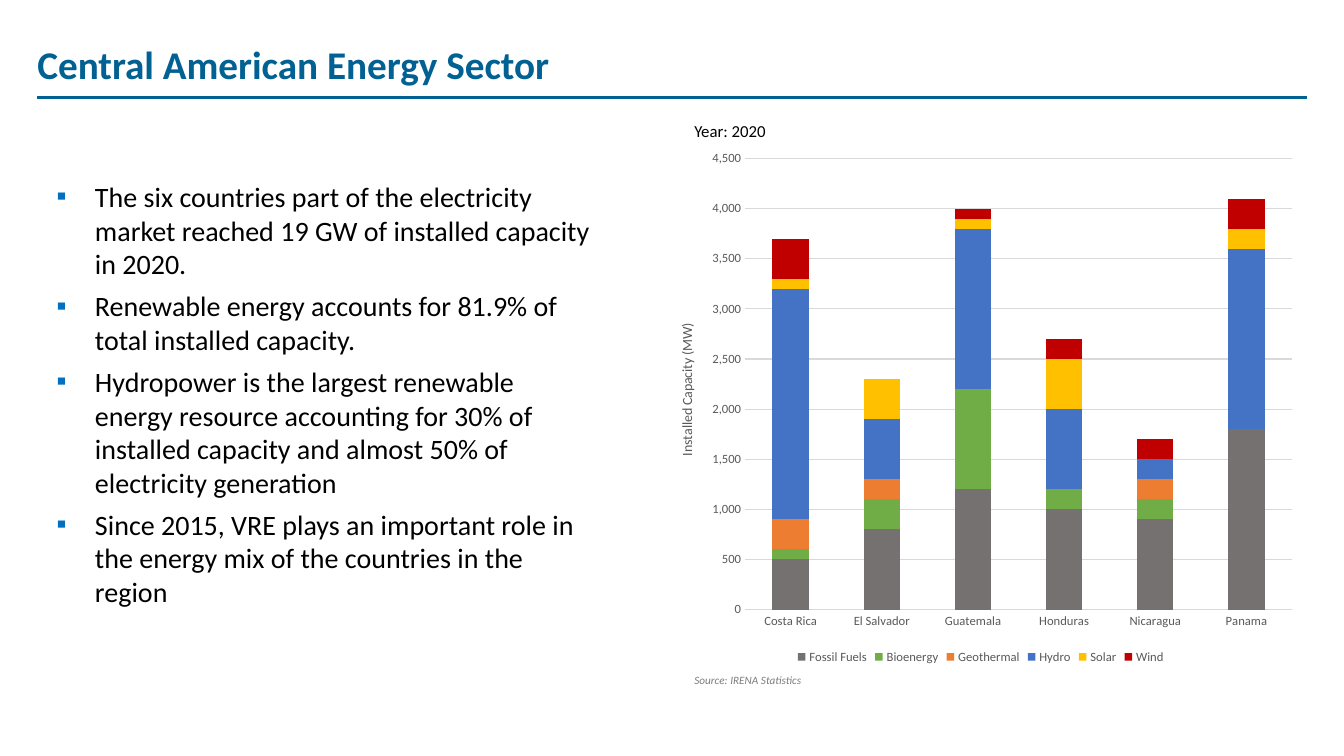
from dataclasses import dataclass

from lxml import etree
from pptx import Presentation
from pptx.chart.data import CategoryChartData
from pptx.dml.color import RGBColor
from pptx.enum.chart import XL_CHART_TYPE, XL_LEGEND_POSITION, XL_TICK_MARK
from pptx.enum.shapes import MSO_CONNECTOR
from pptx.enum.text import MSO_ANCHOR
from pptx.oxml.ns import qn
from pptx.util import Inches, Pt

STACKED = XL_CHART_TYPE.COLUMN_STACKED
LEGEND_BOTTOM = XL_LEGEND_POSITION.BOTTOM
NO_TICK = XL_TICK_MARK.NONE
STRAIGHT = MSO_CONNECTOR.STRAIGHT
TOP, MIDDLE = MSO_ANCHOR.TOP, MSO_ANCHOR.MIDDLE

SLIDE_W, SLIDE_H = Inches(13.33), Inches(7.5)


@dataclass(frozen=True)
class Theme:
    font: str = "Calibri"
    accent: str = "006192"
    text: str = "000000"
    bullet: str = "0070C0"
    source: str = "7C7C7C"
    axis: str = "595959"
    grid: str = "D9D9D9"
    title_size: float = 28
    body_size: float = 20
    year_size: float = 12
    axis_title_size: float = 10
    label_size: float = 9
    source_size: float = 8
    rule_width: float = 2.25
    grid_width: float = 0.75


THEME = Theme()

BULLETS = [
    "The six countries part of the electricity market reached 19 GW of installed capacity in 2020.",
    "Renewable energy accounts for 81.9% of total installed capacity.",
    "Hydropower is the largest renewable energy resource accounting for 30% of "
    "installed capacity and almost 50% of electricity generation",
    "Since 2015, VRE plays an important role in the energy mix of the countries in the region",
]

COUNTRIES = ["Costa Rica", "El Salvador", "Guatemala", "Honduras", "Nicaragua", "Panama"]
CAPACITY = [
    ("Fossil Fuels", "767171", [500, 800, 1200, 1000, 900, 1800]),
    ("Bioenergy", "70AD47", [100, 300, 1000, 200, 200, 0]),
    ("Geothermal", "ED7D31", [300, 200, 0, 0, 200, 0]),
    ("Hydro", "4472C4", [2300, 600, 1600, 800, 200, 1800]),
    ("Solar", "FFC000", [100, 400, 100, 500, 0, 200]),
    ("Wind", "C00000", [400, 0, 100, 200, 200, 300]),
]


def across(percent):
    return int(SLIDE_W * percent / 100)


def down(percent):
    return int(SLIDE_H * percent / 100)


def place(x, y, w, h):
    return across(x), down(y), across(w), down(h)


def style_font(font, size, color, bold=False, italic=False):
    font.name = THEME.font
    font.size = Pt(size)
    font.color.rgb = RGBColor.from_string(color)
    font.bold = bold
    font.italic = italic


def style_line(line, color, width):
    line.color.rgb = RGBColor.from_string(color)
    line.width = Pt(width)


def add_text(s, area, lines, size, color, anchor=TOP, bold=False, italic=False):
    tf = s.shapes.add_textbox(*place(*area)).text_frame
    tf.word_wrap = True
    tf.vertical_anchor = anchor
    tf.text = "\n".join(lines)
    for p in tf.paragraphs:
        for r in p.runs:
            style_font(r.font, size, color, bold, italic)
    return tf


def add_bullet(p):
    p.space_after = Pt(6)
    pPr = p._p.get_or_add_pPr()
    pPr.set("marL", str(Inches(0.88)))
    pPr.set("indent", str(Inches(-0.38)))
    color = etree.SubElement(pPr, qn("a:buClr"))
    etree.SubElement(color, qn("a:srgbClr"), val=THEME.bullet)
    etree.SubElement(pPr, qn("a:buFont"), typeface=THEME.font)
    etree.SubElement(pPr, qn("a:buChar"), char="▪")


def add_rule(s, left, right, y):
    rule = s.shapes.add_connector(STRAIGHT, across(left), down(y), across(right), down(y))
    style_line(rule.line, THEME.accent, THEME.rule_width)
    etree.SubElement(rule._element.spPr, qn("a:effectLst"))


def set_layout(parent, index, **percents):
    for old in parent.findall(qn("c:layout")):
        parent.remove(old)
    layout = etree.Element(qn("c:layout"))
    manual = etree.SubElement(layout, qn("c:manualLayout"))
    if "w" in percents:
        etree.SubElement(manual, qn("c:layoutTarget"), val="inner")
    for key in ("x", "y"):
        etree.SubElement(manual, qn(f"c:{key}Mode"), val="edge")
    for key, percent in percents.items():
        etree.SubElement(manual, qn(f"c:{key}"), val=str(percent / 100))
    parent.insert(index, layout)


def style_value_axis(axis):
    axis.minimum_scale, axis.maximum_scale, axis.major_unit = 0, 4500, 500
    axis.tick_labels.number_format = "#,##0"
    axis.tick_labels.number_format_is_linked = False
    axis.format.line.fill.background()
    axis.has_major_gridlines = True
    style_line(axis.major_gridlines.format.line, THEME.grid, THEME.grid_width)
    title = axis.axis_title
    title.text_frame.text = "Installed Capacity (MW)"
    for r in title.text_frame.paragraphs[0].runs:
        style_font(r.font, THEME.axis_title_size, THEME.axis)
    set_layout(title._element, 1, x=2.8, y=34.2)


def add_capacity_chart(s, area):
    data = CategoryChartData(number_format="#,##0")
    data.categories = COUNTRIES
    for name, _, values in CAPACITY:
        data.add_series(name, values)
    chart = s.shapes.add_chart(STACKED, *place(*area), data).chart
    style_font(chart.font, THEME.axis_title_size, THEME.text)
    chart.has_title = False
    chart.has_legend = True
    chart.legend.position = LEGEND_BOTTOM
    chart.legend.include_in_layout = False
    style_font(chart.legend.font, THEME.label_size, THEME.axis)
    plot = chart.plots[0]
    plot.gap_width, plot.overlap = 150, 100
    plot.vary_by_categories = False
    for series, (_, color, _) in zip(plot.series, CAPACITY):
        series.format.fill.solid()
        series.format.fill.fore_color.rgb = RGBColor.from_string(color)
    for axis in (chart.category_axis, chart.value_axis):
        axis.major_tick_mark = axis.minor_tick_mark = NO_TICK
        style_font(axis.tick_labels.font, THEME.label_size, THEME.axis)
    style_line(chart.category_axis.format.line, THEME.grid, THEME.grid_width)
    style_value_axis(chart.value_axis)
    set_layout(plot._element.getparent(), 0, x=13.6, y=3.5, w=84.5, h=85.4)


def main():
    prs = Presentation()
    prs.slide_width, prs.slide_height = SLIDE_W, SLIDE_H
    s = prs.slides.add_slide(prs.slide_layouts[6])
    add_rule(s, 2.78, 97.26, 12.93)
    add_text(s, (2.05, 2.4, 95.05, 12.13), ["Central American Energy Sector"],
             THEME.title_size, THEME.accent, MIDDLE, bold=True)
    add_capacity_chart(s, (48.89, 18.53, 48.16, 69.87))
    add_text(s, (50.92, 88.4, 31.21, 3.2), ["Source: IRENA Statistics"],
             THEME.source_size, THEME.source, italic=True)
    add_text(s, (50.92, 15.33, 12.75, 4), ["Year: 2020"], THEME.year_size, THEME.text)
    tf = add_text(s, (-0.27, 23.1, 44.94, 69.73), BULLETS, THEME.body_size, THEME.text)
    for p in tf.paragraphs:
        add_bullet(p)
    prs.save("out.pptx")


if __name__ == "__main__":
    main()
